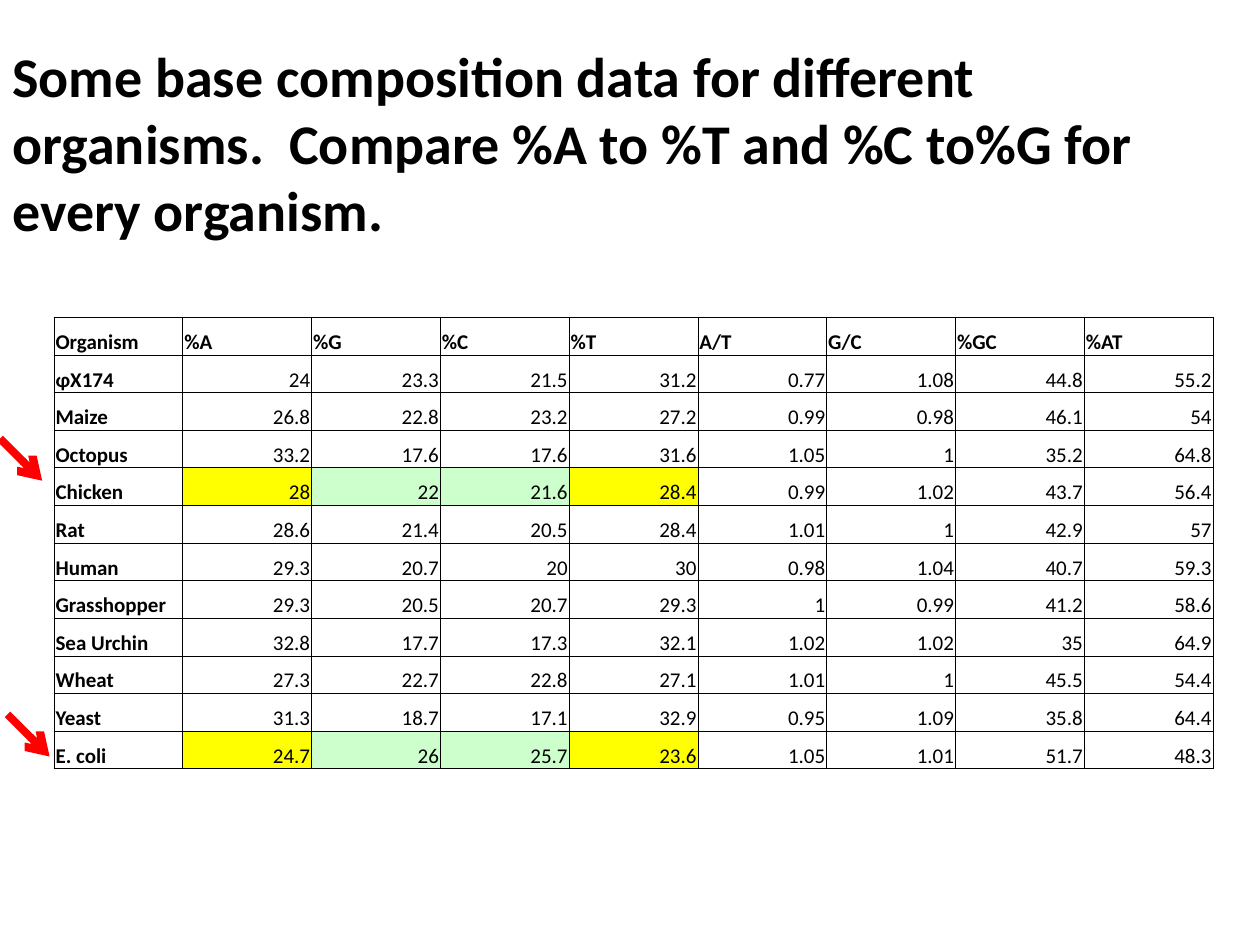
from lxml.etree import SubElement as Sub
from pptx import Presentation
from pptx.dml.color import RGBColor as Rgb
from pptx.enum.shapes import MSO_CONNECTOR as Conn
from pptx.enum.text import MSO_ANCHOR as Anchor, MSO_AUTO_SIZE as Auto, PP_ALIGN as Align
from pptx.oxml.ns import qn
from pptx.util import Cm, Pt

INK = {"text": "000000", "arrow": "FF0000", "at": "FFFF00", "gc": "CCFFCC"}
FONT = "Calibri"
TITLE = ("Some base composition data for different organisms.  "
         "Compare %A to %T and %C to%G for every organism.")
HEAD = ["Organism", "%A", "%G", "%C", "%T", "A/T", "G/C", "%GC", "%AT"]
DATA = [
    ["φX174", 24, 23.3, 21.5, 31.2, 0.77, 1.08, 44.8, 55.2],
    ["Maize", 26.8, 22.8, 23.2, 27.2, 0.99, 0.98, 46.1, 54],
    ["Octopus", 33.2, 17.6, 17.6, 31.6, 1.05, 1, 35.2, 64.8],
    ["Chicken", 28, 22, 21.6, 28.4, 0.99, 1.02, 43.7, 56.4],
    ["Rat", 28.6, 21.4, 20.5, 28.4, 1.01, 1, 42.9, 57],
    ["Human", 29.3, 20.7, 20, 30, 0.98, 1.04, 40.7, 59.3],
    ["Grasshopper", 29.3, 20.5, 20.7, 29.3, 1, 0.99, 41.2, 58.6],
    ["Sea Urchin", 32.8, 17.7, 17.3, 32.1, 1.02, 1.02, 35, 64.9],
    ["Wheat", 27.3, 22.7, 22.8, 27.1, 1.01, 1, 45.5, 54.4],
    ["Yeast", 31.3, 18.7, 17.1, 32.9, 0.95, 1.09, 35.8, 64.4],
    ["E. coli", 24.7, 26, 25.7, 23.6, 1.05, 1.01, 51.7, 48.3],
]
MARKED = {"Chicken", "E. coli"}
TINT = {"%A": "at", "%G": "gc", "%C": "gc", "%T": "at"}


def style(par, size, bold):
    font = par.font
    font.name, font.size, font.bold = FONT, Pt(size), bold
    font.color.rgb = Rgb.from_string(INK["text"])


def add_title(slide, left, top, width, height):
    box = slide.shapes.add_textbox(Cm(left), Cm(top), Cm(width), Cm(height))
    frame = box.text_frame
    frame.word_wrap = True
    frame.auto_size = Auto.SHAPE_TO_FIT_TEXT
    par = frame.paragraphs[0]
    par.text = TITLE
    style(par, 32, True)


def add_edges(cell):
    props = cell._tc.get_or_add_tcPr()
    for side in ("lnL", "lnR", "lnT", "lnB"):
        line = Sub(props, qn(f"a:{side}"), w=str(Pt(0.5)))
        Sub(Sub(line, qn("a:solidFill")), qn("a:srgbClr"), val=INK["text"])


def fill_cell(cell, value, tint):
    add_edges(cell)
    if tint:
        cell.fill.solid()
        cell.fill.fore_color.rgb = Rgb.from_string(INK[tint])
    else:
        cell.fill.background()
    cell.margin_left = cell.margin_right = cell.margin_top = Cm(0.03)
    cell.margin_bottom = 0
    cell.vertical_anchor = Anchor.BOTTOM
    label = isinstance(value, str)
    par = cell.text_frame.paragraphs[0]
    par.text = str(value)
    par.alignment = Align.LEFT if label else Align.RIGHT
    style(par, 12, label)


def add_grid(slide, left, top, width, height):
    rows = [HEAD] + DATA
    table = slide.shapes.add_table(
        len(rows), len(HEAD), Cm(left), Cm(top), Cm(width), Cm(height)).table
    table.first_row = table.horz_banding = False
    for r, row in enumerate(rows):
        for c, value in enumerate(row):
            tint = TINT.get(HEAD[c]) if row[0] in MARKED else None
            fill_cell(table.cell(r, c), value, tint)


def add_arrow(slide, left, top, width, height):
    arrow = slide.shapes.add_connector(
        Conn.STRAIGHT, Cm(left), Cm(top), Cm(left + width), Cm(top + height))
    arrow.line.color.rgb = Rgb.from_string(INK["arrow"])
    arrow.line.width = Pt(4.5)
    Sub(arrow.line._get_or_add_ln(), qn("a:tailEnd"), type="arrow")
    Sub(arrow._element.spPr, qn("a:effectLst"))


def main():
    deck = Presentation()
    deck.slide_width, deck.slide_height = Cm(25.4), Cm(19.05)
    slide = deck.slides.add_slide(deck.slide_layouts[6])
    add_title(slide, 0, 0.71, 25.12, 4.37)
    add_grid(slide, 1.09, 6.4, 23.37, 9.1)
    for left, top in ((0, 8.84), (0.15, 14.4)):
        add_arrow(slide, left, top, 0.85, 0.85)
    deck.save("out.pptx")


if __name__ == "__main__":
    main()
